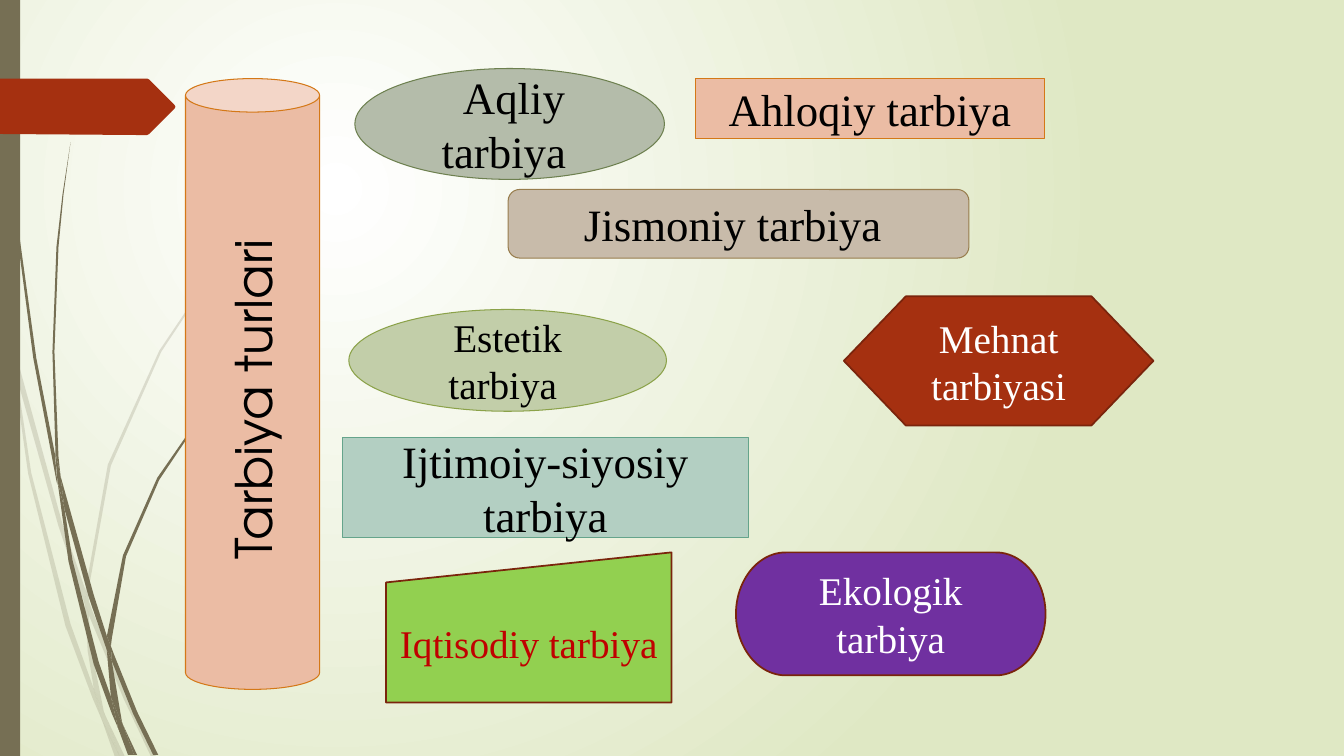
from dataclasses import dataclass

from lxml.etree import SubElement
from pptx import Presentation
from pptx.dml.color import RGBColor
from pptx.enum.shapes import MSO_SHAPE as Shape
from pptx.enum.text import MSO_ANCHOR, PP_ALIGN
from pptx.oxml.ns import qn
from pptx.util import Pt

PX = 9144
WIDTH, HEIGHT = 1333, 750
SERIF, SANS = "Times New Roman", "TeX Gyre Adventor"

COLORS = {
    "white": "FFFFFF", "black": "000000", "mist": "DFE8C4", "stem": "766F54",
    "rust": "A53010", "dark_rust": "7A240C", "peach": "EBBCA4", "orange": "D47817",
    "sage": "B4BCAA", "moss": "6D804F", "sand": "C8BBAA", "brown": "987D4D",
    "lime": "C2CEA9", "olive": "8BA249", "mint": "B3CFC2", "teal": "65A48B",
    "purple": "7030A0", "green": "92D050", "red": "C00000",
}

Points = list[tuple[int, int]]

PALE_WISPS: list[Points] = [
    [(11, 350), (9, 322), (0, 282), (0, 299), (10, 344)],
    [(58, 522), (84, 599), (85, 586), (62, 520), (14, 345), (17, 376)],
    [(92, 607), (88, 596), (88, 610), (123, 694), (150, 751), (155, 751), (127, 692)],
    [(119, 751), (124, 751), (105, 711)],
    [(93, 683), (70, 619), (31, 469), (17, 376), (11, 350), (28, 470), (65, 621),
     (92, 693), (101, 714), (99, 707)],
    [(84, 599), (87, 646), (93, 683), (96, 692), (105, 711), (103, 706), (91, 646),
     (88, 610), (88, 608)],
    [(88, 584), (110, 462), (160, 349), (229, 245), (268, 198), (290, 175), (312, 154),
     (312, 153), (289, 175), (268, 197), (228, 244), (158, 348), (107, 461), (85, 584),
     (85, 586), (88, 596)],
    [(101, 714), (114, 751), (119, 751)],
    [(88, 608), (88, 610), (88, 596), (85, 586), (84, 599)],
    [(96, 692), (93, 683), (99, 707), (101, 714), (119, 751), (105, 711)],
]

DARK_WISPS: list[Points] = [
    [(7, 110), (17, 233), (33, 355), (56, 477), (57, 481), (55, 457), (55, 453),
     (36, 355), (19, 232), (8, 109), (5, 48), (4, 0), (3, 0), (4, 48)],
    [(88, 592), (106, 645), (106, 633), (106, 631), (93, 590), (60, 472), (64, 505)],
    [(113, 649), (110, 641), (111, 656), (132, 708), (152, 749), (157, 749), (136, 706)],
    [(110, 691), (98, 657), (72, 556), (64, 505), (57, 477), (68, 557), (93, 659),
     (111, 708), (117, 722), (116, 717)],
    [(60, 472), (58, 453), (54, 349), (58, 245), (63, 193), (70, 141), (62, 193),
     (56, 245), (52, 349), (55, 449)],
    [(133, 749), (136, 749), (122, 719)],
    [(57, 477), (64, 505), (60, 472), (55, 449), (55, 453)],
    [(111, 633), (125, 552), (158, 476), (205, 406), (231, 374), (245, 359), (261, 344),
     (260, 344), (245, 358), (231, 373), (204, 405), (156, 474), (122, 551), (106, 631),
     (110, 641)],
    [(117, 722), (127, 749), (131, 749)],
    [(106, 645), (110, 691), (116, 706), (122, 719), (121, 716), (111, 656), (109, 651)],
    [(106, 645), (109, 651), (111, 656), (110, 641), (106, 631), (106, 633)],
    [(116, 706), (110, 691), (116, 717), (117, 722), (130, 749), (133, 749), (122, 719)],
]

PAGE_ARROW: Points = [(173, 108), (148, 133), (146, 134), (136, 134), (0, 133), (0, 78),
                      (146, 78), (148, 79), (173, 104), (174, 106)]


@dataclass
class Card:
    text: str
    kind: Shape
    box: tuple[int, int, int, int]
    fill: str
    line: str
    size: int = 32
    color: str = "black"
    font: str = SERIF
    weight: float = 0.75
    vert: str = "horz"


CARDS = [
    Card("Tarbiya turlari ", Shape.CAN, (184, 78, 133, 606), "peach", "orange", 36,
         font=SANS, vert="vert270"),
    Card(" Aqliy tarbiya ", Shape.OVAL, (352, 68, 307, 110), "sage", "moss"),
    Card("Ahloqiy tarbiya", Shape.RECTANGLE, (690, 78, 346, 59), "peach", "orange"),
    Card("Jismoniy tarbiya ", Shape.ROUNDED_RECTANGLE, (504, 188, 457, 68), "sand", "brown"),
    Card("Estetik tarbiya ", Shape.OVAL, (346, 307, 315, 101), "lime", "olive", 28),
    Card("Ijtimoiy-siyosiy tarbiya", Shape.RECTANGLE, (340, 434, 402, 99), "mint", "teal"),
    Card("Mehnat tarbiyasi", Shape.FLOWCHART_PREPARATION, (837, 294, 307, 128),
         "rust", "dark_rust", 28, "white", weight=1.25),
    Card("Ekologik tarbiya", Shape.FLOWCHART_TERMINATOR, (730, 548, 307, 122),
         "purple", "dark_rust", 28, "white", weight=1.25),
    Card("Iqtisodiy tarbiya", Shape.FLOWCHART_MANUAL_INPUT, (383, 548, 283, 149),
         "green", "dark_rust", 28, "red", weight=1.25),
]


def rgb(name: str) -> RGBColor:
    return RGBColor.from_string(COLORS[name])


def paint(sp, fill: str) -> None:
    sp.shadow.inherit = False
    sp.fill.solid()
    sp.fill.fore_color.rgb = rgb(fill)


def draw_outline(shapes, points: Points, fill: str, opacity: int = 100) -> None:
    builder = shapes.build_freeform(*points[0], scale=PX)
    builder.add_line_segments(points[1:], close=True)
    sp = builder.convert_to_shape()
    paint(sp, fill)
    sp.line.fill.background()
    if opacity < 100:
        clr = sp.element.spPr.find(f"{qn('a:solidFill')}/{qn('a:srgbClr')}")
        SubElement(clr, qn("a:alpha"), val=str(opacity * 1000))


def draw_wisps(slide, wisps: list[Points], opacity: int) -> None:
    group = slide.shapes.add_group_shape()
    for points in wisps:
        draw_outline(group.shapes, points, "stem", opacity)


def draw_card(slide, card: Card) -> None:
    sp = slide.shapes.add_shape(card.kind, *(v * PX for v in card.box))
    paint(sp, card.fill)
    sp.line.color.rgb = rgb(card.line)
    sp.line.width = Pt(card.weight)
    tf = sp.text_frame
    tf.word_wrap = True
    tf.vertical_anchor = MSO_ANCHOR.MIDDLE
    tf.text = card.text
    tf._txBody.bodyPr.set("vert", card.vert)
    p = tf.paragraphs[0]
    p.alignment = PP_ALIGN.CENTER
    font = p.runs[0].font
    font.name, font.size = card.font, Pt(card.size)
    font.color.rgb = rgb(card.color)


def draw_background(slide) -> None:
    fill = slide.background.fill
    fill.gradient()
    for stop, name, position in zip(fill.gradient_stops, ("white", "mist"), (0, 1)):
        stop.color.rgb = rgb(name)
        stop.position = position
    grad = slide.element.find(f".//{qn('a:gradFill')}")
    grad.remove(grad.find(qn("a:lin")))
    glow = SubElement(grad, qn("a:path"), path="circle")
    SubElement(glow, qn("a:fillToRect"), l="50000", t="50000", r="100000", b="100000")


def main() -> None:
    prs = Presentation()
    prs.slide_width, prs.slide_height = WIDTH * PX, HEIGHT * PX
    slide = prs.slides.add_slide(prs.slide_layouts[6])
    draw_background(slide)
    draw_wisps(slide, PALE_WISPS, 20)
    draw_wisps(slide, DARK_WISPS, 100)
    bar = slide.shapes.add_shape(Shape.RECTANGLE, 0, 0, 20 * PX, HEIGHT * PX)
    paint(bar, "stem")
    bar.line.fill.background()
    draw_outline(slide.shapes, PAGE_ARROW, "rust")
    for card in CARDS:
        draw_card(slide, card)
    prs.save("out.pptx")


if __name__ == "__main__":
    main()
